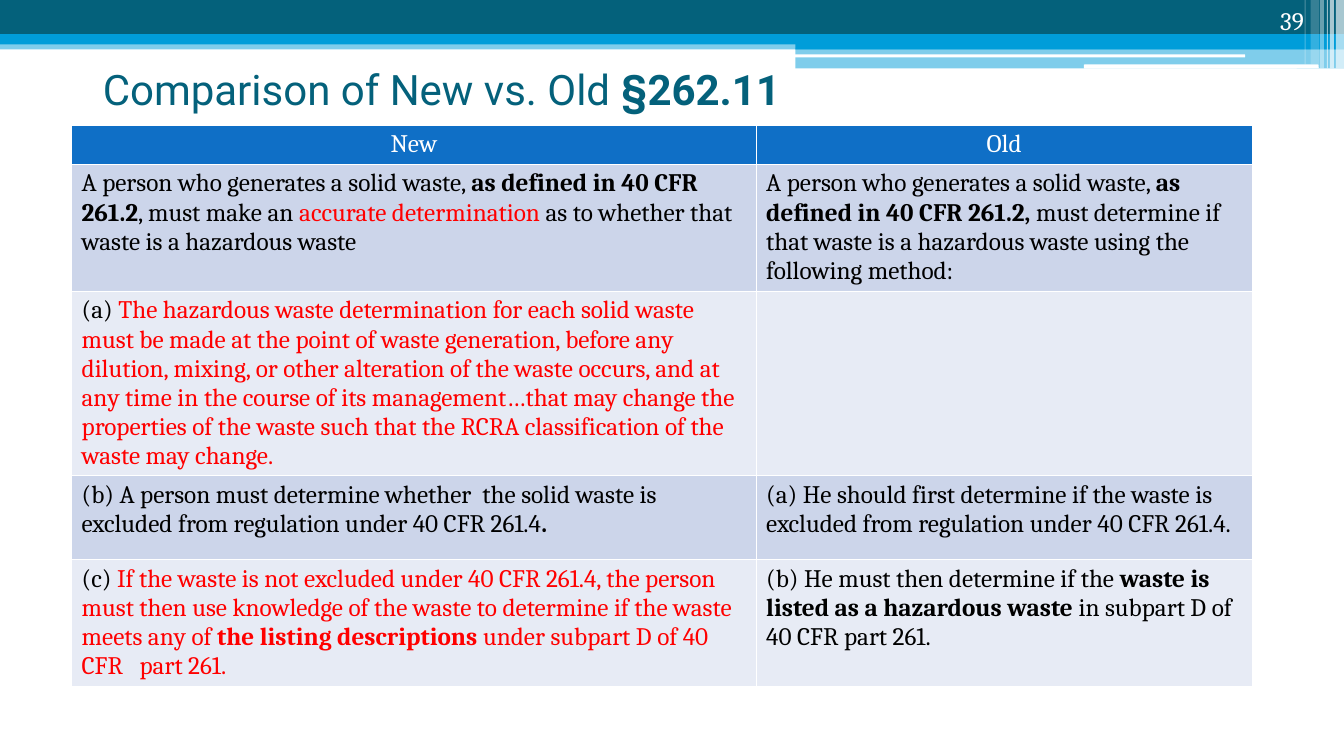
from lxml.etree import SubElement
from pptx import Presentation
from pptx.dml.color import RGBColor
from pptx.enum.shapes import MSO_SHAPE
from pptx.enum.text import MSO_ANCHOR, PP_ALIGN
from pptx.oxml.ns import qn
from pptx.util import Inches, Pt

COLORS = {
    "teal": "04617B", "sky": "009DD9", "header": "0F6FC6", "white": "FFFFFF",
    "black": "000000", "red": "FF0000", "dark_band": "CCD5EA", "light_band": "E7EBF5",
}


def rgb(name):
    return RGBColor.from_string(COLORS[name])


def add_cell_borders(cell):
    properties = cell._tc.get_or_add_tcPr()
    for side in ("lnL", "lnR", "lnT", "lnB"):
        line = SubElement(properties, qn(f"a:{side}"), w=str(Pt(1)))
        SubElement(SubElement(line, qn("a:solidFill")), qn("a:srgbClr"), val=COLORS["white"])


deck = Presentation()
deck.slide_width, deck.slide_height = Inches(13.33), Inches(7.5)
slide = deck.slides.add_slide(deck.slide_layouts[5])

RECT, ROUNDED = MSO_SHAPE.RECTANGLE, MSO_SHAPE.ROUNDED_RECTANGLE
banner_parts = [
    (RECT, 0, 0.4, 13.33, 0.09, "sky", 50),
    (RECT, 0, 0, 13.33, 0.34, "teal", 100),
    (RECT, 0, 0.34, 13.33, 0.1, "sky", 100),
    (RECT, 7.89, 0.39, 5.44, 0.1, "sky", 100),
    (RECT, 7.89, 0.48, 5.44, 0.2, "sky", 50),
    (ROUNDED, 7.88, 0.54, 4.47, 0.03, "white", 100),
    (ROUNDED, 10.75, 0.64, 2.33, 0.04, "white", 100),
    (RECT, 13.25, 0, 0.08, 0.68, "white", 65),
    (RECT, 13.19, 0, 0.04, 0.68, "white", 65),
    (RECT, 13.16, 0, 0.01, 0.68, "white", 60),
    (RECT, 13.09, 0, 0.04, 0.68, "white", 40),
    (RECT, 13, 0, 0.08, 0.64, "white", 20),
    (RECT, 12.94, 0, 0.01, 0.64, "white", 30),
]
for outline, left, top, width, height, color, opacity in banner_parts:
    stripe = slide.shapes.add_shape(
        outline, Inches(left), Inches(top), Inches(width), Inches(height))
    stripe.shadow.inherit = False
    stripe.line.fill.background()
    stripe.fill.solid()
    stripe.fill.fore_color.rgb = rgb(color)
    if opacity < 100:
        fill_color = stripe._element.spPr.find(qn("a:solidFill"))[0]
        SubElement(fill_color, qn("a:alpha"), val=str(opacity * 1000))

title = slide.shapes.title
title.left, title.top = Inches(0.92), Inches(0.4)
title.width, title.height = Inches(11.5), Inches(0.96)
title.text_frame.vertical_anchor = MSO_ANCHOR.MIDDLE
heading = title.text_frame.paragraphs[0]
heading.alignment = PP_ALIGN.LEFT
heading.font.size, heading.font.name = Pt(30), "Roboto"
heading.font.color.rgb = rgb("teal")
heading.add_run().text = "Comparison of New vs. Old "
section = heading.add_run()
section.text = "§262.11"
section.font.bold = True

comparison = [
    ([("New", "white", False)], [("Old", "white", False)]),
    ([("A person who generates a solid waste, ", "black", False),
      ("as defined in 40 CFR 261.2", "black", True),
      (", must make an ", "black", False),
      ("accurate determination ", "red", False),
      ("as to whether that waste is a hazardous waste", "black", False)],
     [("A person who generates a solid waste, ", "black", False),
      ("as defined in 40 CFR 261.2, ", "black", True),
      ("must determine if that waste is a hazardous waste using the following method:",
       "black", False)]),
    ([("(a) ", "black", False),
      ("The hazardous waste determination for each solid waste must be made at the point of "
       "waste generation, before any dilution, mixing, or other alteration of the waste occurs, "
       "and at any time in the course of its management…that may change the properties of the "
       "waste such that the RCRA classification of the waste may change.", "red", False)],
     []),
    ([("(b) A person must determine whether  the solid waste is excluded from regulation "
       "under 40 CFR 261.4", "black", False),
      (".", "black", True)],
     [("(a) He should first determine if the waste is excluded from regulation "
       "under 40 CFR 261.4.", "black", False)]),
    ([("(c) ", "black", False),
      ("If the waste is not excluded under 40 CFR 261.4, the person must then use knowledge "
       "of the waste to determine if the waste meets any of ", "red", False),
      ("the listing descriptions ", "red", True),
      ("under subpart D of 40 CFR   part 261.", "red", False)],
     [("(b) He must then determine if the ", "black", False),
      ("waste is listed as a hazardous waste ", "black", True),
      ("in subpart D of 40 CFR part 261.", "black", False)]),
]
row_heights = [0.38, 1.26, 1.82, 0.83, 1.26]
table = slide.shapes.add_table(
    len(comparison), 2, Inches(0.71), Inches(1.24),
    Inches(11.71), Inches(sum(row_heights))).table
table.columns[0].width, table.columns[1].width = Inches(6.79), Inches(4.92)

for row_index, (provisions, row_height) in enumerate(zip(comparison, row_heights)):
    table.rows[row_index].height = Inches(row_height)
    band = "header" if row_index == 0 else ("light_band", "dark_band")[row_index % 2]
    for column_index, passages in enumerate(provisions):
        cell = table.cell(row_index, column_index)
        add_cell_borders(cell)
        cell.fill.solid()
        cell.fill.fore_color.rgb = rgb(band)
        provision = cell.text_frame.paragraphs[0]
        provision.alignment = PP_ALIGN.CENTER if row_index == 0 else PP_ALIGN.LEFT
        provision.font.size, provision.font.name = Pt(18), "Cambria"
        for words, color, bold in passages:
            passage = provision.add_run()
            passage.text = words
            passage.font.bold = bold
            passage.font.color.rgb = rgb(color)

page_box = slide.shapes.add_textbox(Inches(11.92), Inches(0), Inches(1.11), Inches(0.4))
page_box.text_frame.word_wrap = True
page_box.text_frame.vertical_anchor = MSO_ANCHOR.BOTTOM
page_number = page_box.text_frame.paragraphs[0]
page_number.text = "39"
page_number.alignment = PP_ALIGN.RIGHT
page_number.font.size, page_number.font.name = Pt(18), "Cambria"
page_number.font.color.rgb = rgb("white")

deck.save("out.pptx")
